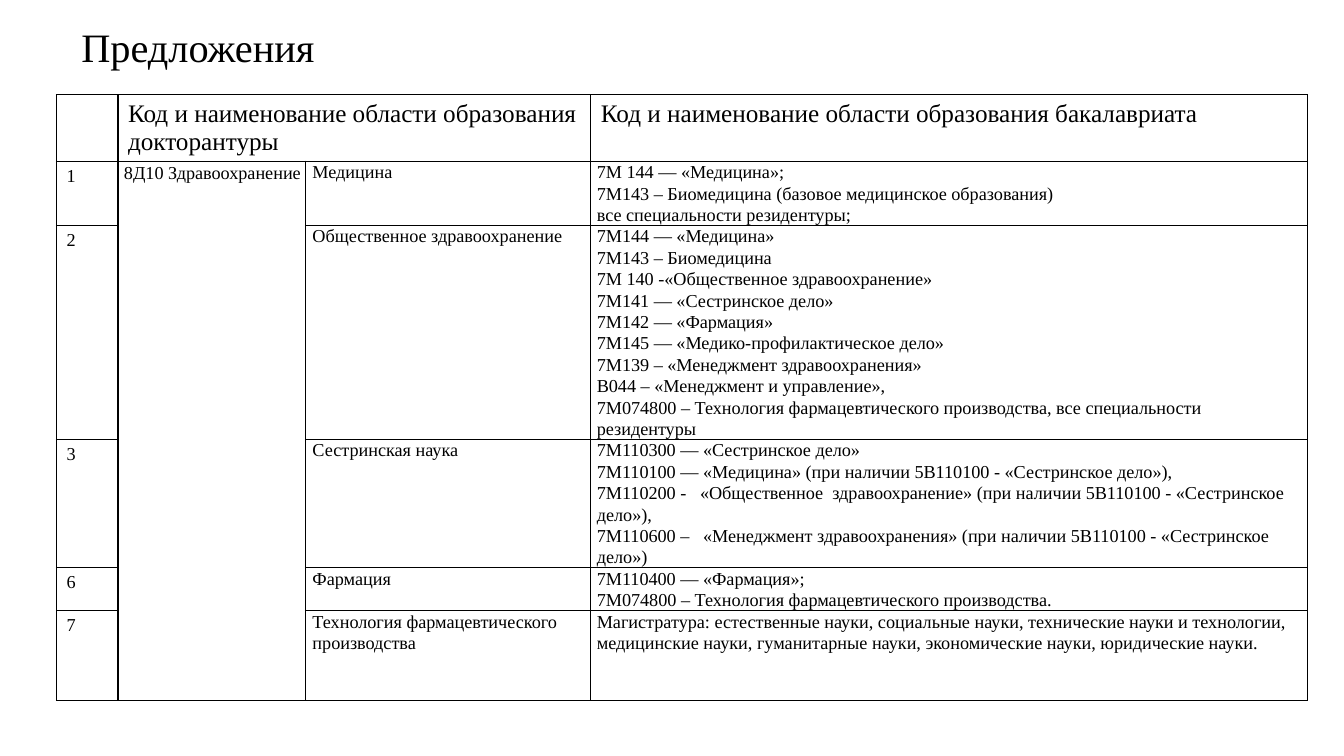
from lxml.etree import SubElement
from pptx import Presentation
from pptx.dml.color import RGBColor
from pptx.enum.text import MSO_ANCHOR, MSO_AUTO_SIZE, PP_ALIGN
from pptx.oxml.ns import qn
from pptx.util import Inches, Pt

BLACK = RGBColor(0x00, 0x00, 0x00)
WHITE = RGBColor(0xFF, 0xFF, 0xFF)
FONT = "Times New Roman"
HEADER_SIZE, BODY_SIZE = 18, 13

SLIDE_W, SLIDE_H = Inches(13.33), Inches(7.5)
TABLE_LEFT, TABLE_TOP = Inches(0.56), Inches(0.94)
COLUMNS = [0.61, 1.86, 2.83, 7.11]
ROWS = [0.66, 0.59, 2, 1, 0.41, 0.89]

# Cell insets: left, top, right, bottom
AREA_INSETS = (0.06, 0.01, 0.01, 0.01)
FIELD_INSETS = (0.07, 0, 0.07, 0)
CODES_INSETS = (0.06, 0, 0.07, 0)

DOCTORAL_HEADER = "Код и наименование области образования докторантуры"
BACHELOR_HEADER = "Код и наименование области образования бакалавриата"
AREA = "8Д10 Здравоохранение"
FIELDS = [
    ("1", "Медицина", [
        "7М 144 — «Медицина»;",
        "7М143 – Биомедицина (базовое медицинское образования)",
        "все специальности резидентуры;",
    ]),
    ("2", "Общественное здравоохранение", [
        "7М144 — «Медицина»",
        "7М143 – Биомедицина",
        "7М 140 -«Общественное здравоохранение»",
        "7М141 — «Сестринское дело»",
        "7М142 — «Фармация»",
        "7М145 — «Медико-профилактическое дело»",
        "7М139 – «Менеджмент здравоохранения»",
        "В044 – «Менеджмент и управление»,",
        "7М074800 – Технология фармацевтического производства, все специальности резидентуры",
    ]),
    ("3", "Сестринская наука", [
        "7М110300 — «Сестринское дело»",
        "7М110100 — «Медицина» (при наличии 5В110100 - «Сестринское дело»),",
        "7М110200 -   «Общественное  здравоохранение» (при наличии 5В110100 - «Сестринское дело»),",
        "7М110600 –   «Менеджмент здравоохранения» (при наличии 5В110100 - «Сестринское дело»)",
    ]),
    ("6", "Фармация", [
        "7М110400 — «Фармация»;",
        "7М074800 – Технология фармацевтического производства.",
    ]),
    ("7", "Технология фармацевтического производства", [
        "Магистратура: естественные науки, социальные науки, технические науки и технологии, "
        "медицинские науки, гуманитарные науки, экономические науки, юридические науки.",
    ]),
]


def add_run(p, text, size):
    r = p.add_run()
    r.text = text
    r.font.name = FONT
    r.font.size = Pt(size)
    r.font.bold = False
    r.font.color.rgb = BLACK


def set_title(s, text):
    title = s.shapes.title
    title.left, title.top = int(SLIDE_W * 0.053), int(SLIDE_H * 0.03)
    title.width, title.height = int(SLIDE_W * 0.878), int(SLIDE_H * 0.07)
    tf = title.text_frame
    tf.auto_size = MSO_AUTO_SIZE.NONE
    tf.vertical_anchor = MSO_ANCHOR.MIDDLE
    p = tf.paragraphs[0]
    p.alignment = PP_ALIGN.LEFT
    p.line_spacing = 0.9
    add_run(p, text, 28.8)


def style_cell(cell):
    """Give the cell a thin black frame and no fill."""
    tc_pr = cell._tc.get_or_add_tcPr()
    for side in ("a:lnL", "a:lnR", "a:lnT", "a:lnB"):
        line = SubElement(tc_pr, qn(side), w=str(Pt(1)))
        fill = SubElement(line, qn("a:solidFill"))
        SubElement(fill, qn("a:srgbClr"), val=str(BLACK))
    cell.fill.background()


def fill_cell(cell, lines, size=BODY_SIZE, insets=None, spacing=None, after=None, align=None):
    if insets:
        (cell.margin_left, cell.margin_top,
         cell.margin_right, cell.margin_bottom) = map(Inches, insets)
    tf = cell.text_frame
    for i, text in enumerate(lines):
        p = tf.add_paragraph() if i else tf.paragraphs[0]
        p.alignment = align
        p.line_spacing = spacing
        p.space_after = after
        add_run(p, text, size)


def add_grid(s):
    """Add the empty framed table with its merged cells."""
    table = s.shapes.add_table(len(ROWS), len(COLUMNS), TABLE_LEFT, TABLE_TOP,
                               Inches(sum(COLUMNS)), Inches(sum(ROWS))).table
    table.first_row = table.horz_banding = False
    for column, width in zip(table.columns, COLUMNS):
        column.width = Inches(width)
    for row, height in zip(table.rows, ROWS):
        row.height = Inches(height)
    for cell in table.iter_cells():
        style_cell(cell)
    table.cell(0, 1).merge(table.cell(0, 2))
    table.cell(1, 1).merge(table.cell(len(FIELDS), 1))
    return table


def fill_table(table):
    fill_cell(table.cell(0, 1), [DOCTORAL_HEADER], HEADER_SIZE)
    fill_cell(table.cell(0, 3), [BACHELOR_HEADER], HEADER_SIZE)
    fill_cell(table.cell(1, 1), [AREA], insets=AREA_INSETS, spacing=1.07,
              align=PP_ALIGN.JUSTIFY)
    for row, (number, field, codes) in enumerate(FIELDS, start=1):
        fill_cell(table.cell(row, 0), [number])
        fill_cell(table.cell(row, 2), [field], insets=FIELD_INSETS, spacing=1.07, after=Pt(8))
        fill_cell(table.cell(row, 3), codes, insets=CODES_INSETS, spacing=1.07,
                  after=Pt(8) if len(codes) == 1 else None)


def main():
    prs = Presentation()
    prs.slide_width, prs.slide_height = SLIDE_W, SLIDE_H
    s = prs.slides.add_slide(prs.slide_layouts[5])
    s.background.fill.solid()
    s.background.fill.fore_color.rgb = WHITE
    set_title(s, "Предложения")
    fill_table(add_grid(s))
    prs.save("out.pptx")


if __name__ == "__main__":
    main()
